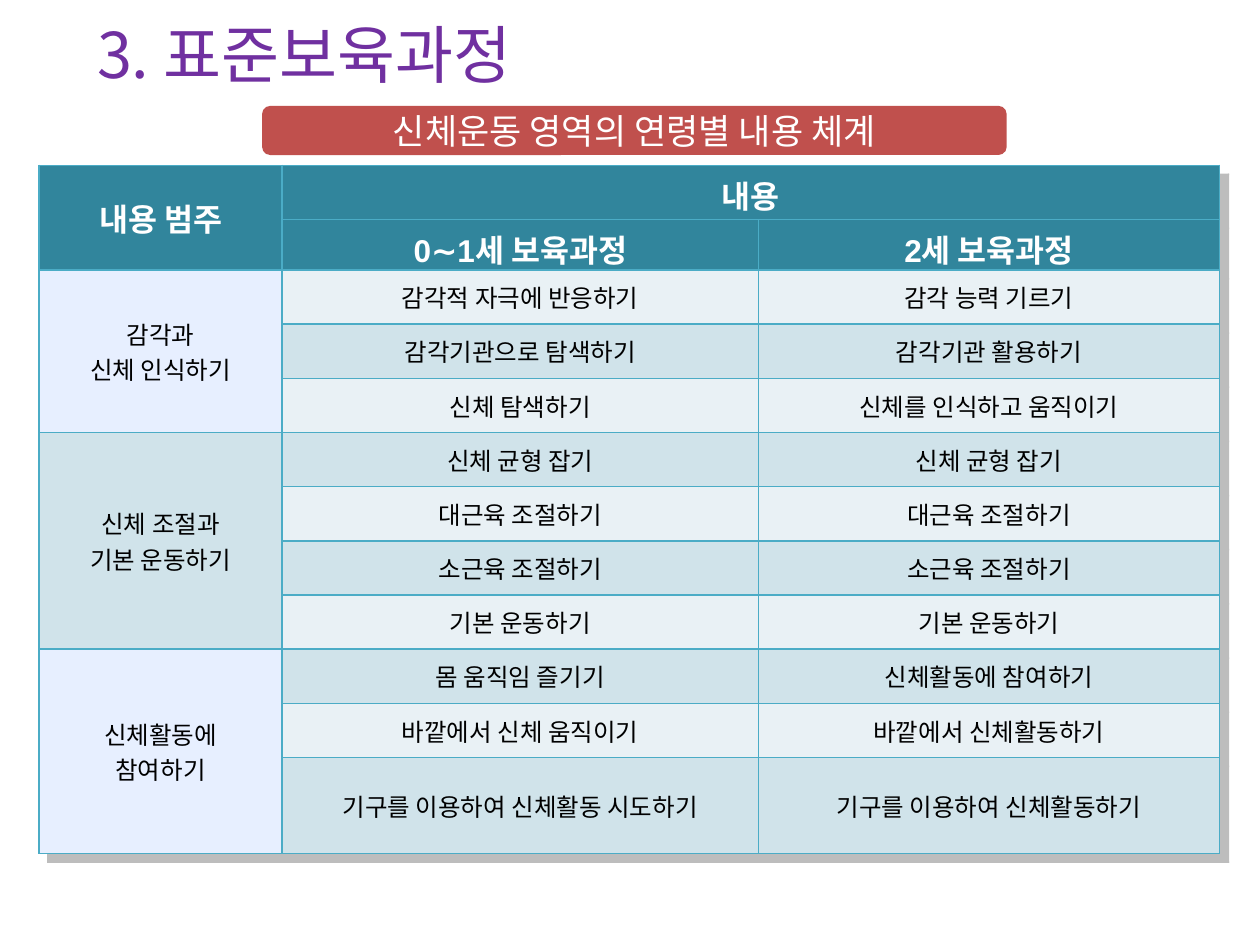
"""Build a slide on the standard childcare curriculum for physical activity."""
from lxml import etree
from pptx import Presentation
from pptx.dml.color import RGBColor
from pptx.enum.shapes import MSO_SHAPE
from pptx.enum.text import MSO_ANCHOR, MSO_AUTO_SIZE, PP_ALIGN
from pptx.oxml.ns import qn
from pptx.util import Inches, Pt

ROUND = MSO_SHAPE.ROUNDED_RECTANGLE
TOP, MID = MSO_ANCHOR.TOP, MSO_ANCHOR.MIDDLE
LEFT, CENTER = PP_ALIGN.LEFT, PP_ALIGN.CENTER
GROW = MSO_AUTO_SIZE.SHAPE_TO_FIT_TEXT
COLORS = {
    "white": "FFFFFF", "black": "000000", "plum": "7030A0", "navy": "002060",
    "red": "C0504D", "teal": "31859C", "line": "4BACC6",
    "lilac": "E7EFFF", "pale": "E9F1F5", "mist": "D0E3EA",
}
LATIN, KOREAN = "Arial", "Noto Sans CJK KR"
WIDTHS = [1.93, 3.78, 3.66]
HEIGHTS = [0.43, 0.36] + [0.43] * 9 + [0.76]
HEAD = [["내용 범주", "내용", ""], ["", "0∼1세 보육과정", "2세 보육과정"]]
GROUPS = [
    ("감각과\n신체 인식하기", [
        ("감각적 자극에 반응하기", "감각 능력 기르기"),
        ("감각기관으로 탐색하기", "감각기관 활용하기"),
        ("신체 탐색하기", "신체를 인식하고 움직이기")]),
    ("신체 조절과\n기본 운동하기", [
        ("신체 균형 잡기", "신체 균형 잡기"),
        ("대근육 조절하기", "대근육 조절하기"),
        ("소근육 조절하기", "소근육 조절하기"),
        ("기본 운동하기", "기본 운동하기")]),
    ("신체활동에\n참여하기", [
        ("몸 움직임 즐기기", "신체활동에 참여하기"),
        ("바깥에서 신체 움직이기", "바깥에서 신체활동하기"),
        ("기구를 이용하여 신체활동 시도하기", "기구를 이용하여 신체활동하기")]),
]


def rgb(name):
    """Return the named colour."""
    return RGBColor.from_string(COLORS[name])


def add(node, tag, **attrs):
    """Append a drawing element and return it."""
    return etree.SubElement(node, qn(tag), {k: str(v) for k, v in attrs.items()})


def stroke(node, tag, color, width):
    """Append a solid line element and return it."""
    line = add(node, tag, w=Pt(width))
    add(add(line, "a:solidFill"), "a:srgbClr", val=COLORS[color])
    return line


class Deck:
    """Hold the style and the current slide."""

    def __init__(self, width, height):
        """Start a deck with one title-only slide."""
        self.prs = Presentation()
        self.prs.slide_width, self.prs.slide_height = Inches(width), Inches(height)
        self.slide = self.prs.slides.add_slide(self.prs.slide_layouts[5])

    def area(self, x, y, w, h):
        """Turn shares of the slide into lengths."""
        wide, high = self.prs.slide_width, self.prs.slide_height
        return int(x * wide), int(y * high), int(w * wide), int(h * high)

    def style(self, frame, size, color, font, bold=False, align=CENTER):
        """Format every run of a text frame."""
        for para in frame.paragraphs:
            para.alignment = align
            for run in para.runs:
                run.font.size, run.font.bold = Pt(size), bold
                run.font.color.rgb, run.font.name = rgb(color), font
                add(run.font._element, "a:ea", typeface=KOREAN)

    def title(self, text, box):
        """Fill the title placeholder with outlined text."""
        shape = self.slide.shapes.title
        shape.left, shape.top, shape.width, shape.height = self.area(*box)
        frame = shape.text_frame
        frame.text = text
        frame.vertical_anchor, frame.auto_size = TOP, GROW
        self.style(frame, 36, "plum", KOREAN, align=LEFT)
        props = frame.paragraphs[0].runs[0].font._element
        props.insert(0, stroke(props, "a:ln", "navy", 0.75))

    def banner(self, text, box):
        """Add a rounded banner."""
        shape = self.slide.shapes.add_shape(ROUND, *self.area(*box))
        shape.shadow.inherit = False
        shape.fill.solid()
        shape.fill.fore_color.rgb = rgb("red")
        shape.line.fill.background()
        frame = shape.text_frame
        frame.text = text
        frame.vertical_anchor = MID
        frame.margin_left = frame.margin_right = Inches(0.24)
        self.style(frame, 20, "white", LATIN)

    def cell(self, cell, text, fill, head):
        """Write, border and fill one table cell."""
        cell.text = text
        cell.vertical_anchor = MID
        look = (18, "white", LATIN, True) if head else (14, "black", KOREAN)
        self.style(cell.text_frame, *look)
        props = cell._tc.get_or_add_tcPr()
        for side in "LRTB":
            stroke(props, f"a:ln{side}", "line", 1)
        cell.fill.solid()
        cell.fill.fore_color.rgb = rgb(fill)

    def table(self, box):
        """Add the table of categories by age."""
        shape = self.slide.shapes.add_table(
            len(HEIGHTS), len(WIDTHS), *self.area(*box))
        table = shape.table
        for col, width in zip(table.columns, WIDTHS):
            col.width = Inches(width)
        for row, height in zip(table.rows, HEIGHTS):
            row.height = Inches(height)
        for r, texts in enumerate(HEAD):
            for c, text in enumerate(texts):
                self.cell(table.cell(r, c), text, "teal", True)
        table.cell(0, 0).merge(table.cell(1, 0))
        table.cell(0, 1).merge(table.cell(0, 2))
        r = len(HEAD)
        for g, (name, items) in enumerate(GROUPS):
            start = r
            for pair in items:
                tint = ("pale", "mist")[r % 2]
                label = name if r == start else ""
                self.cell(table.cell(r, 0), label, ("lilac", "mist")[g % 2], False)
                for c, text in enumerate(pair, 1):
                    self.cell(table.cell(r, c), text, tint, False)
                r += 1
            table.cell(start, 0).merge(table.cell(r - 1, 0))
        self.shade(table)

    def shade(self, table):
        """Give the table a soft grey drop shadow."""
        props = table._tbl.tblPr
        effect = add(props, "a:effectLst")
        props.insert(0, effect)
        drop = add(effect, "a:outerShdw", dist=Inches(0.1), dir=2700000,
                   algn="tl", rotWithShape=0)
        add(add(drop, "a:srgbClr", val=COLORS["black"]), "a:alpha", val=26000)


def main():
    """Build and save the slide."""
    deck = Deck(10, 7.5)
    deck.title("3. 표준보육과정", (0.067, 0.01, 0.906, 0.095))
    deck.banner("신체운동 영역의 연령별 내용 체계", (0.208, 0.112, 0.591, 0.052))
    deck.table((0.031, 0.175, 0.937, 0.73))
    deck.prs.save("out.pptx")


if __name__ == "__main__":
    main()
